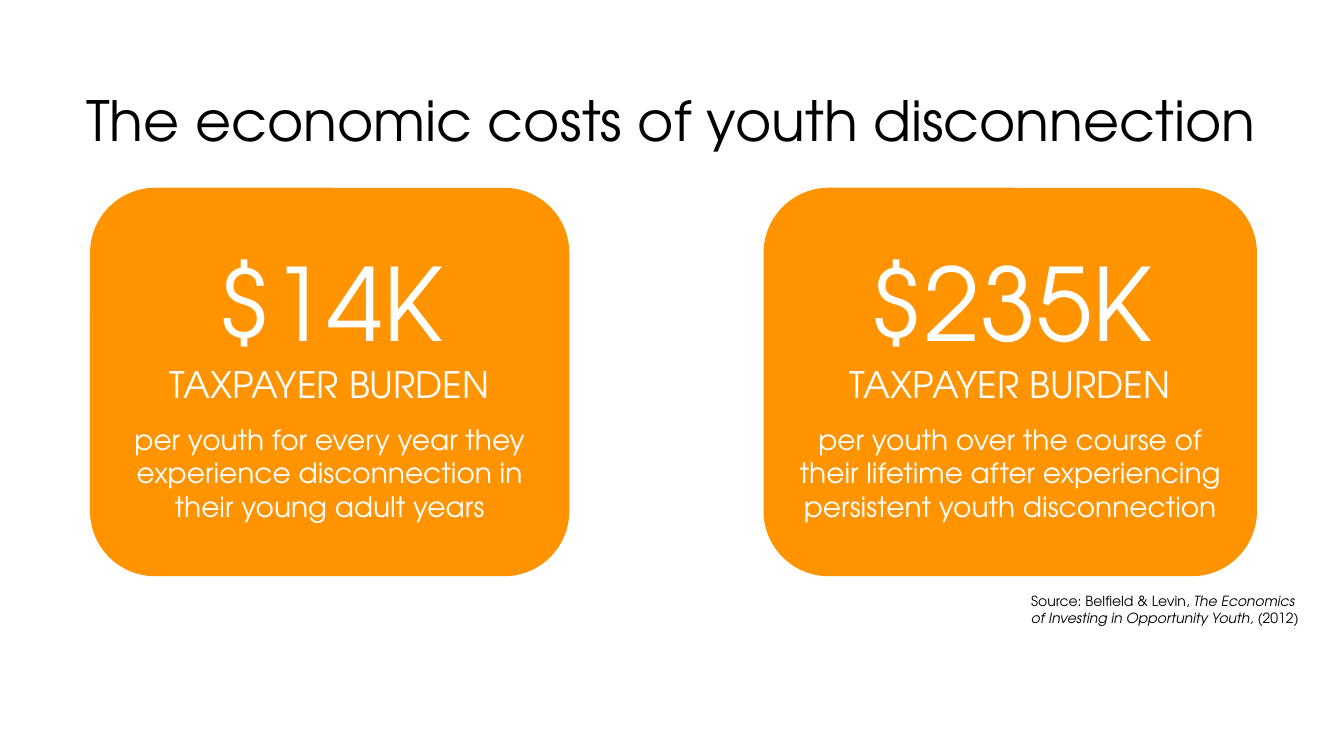
from dataclasses import dataclass

from pptx import Presentation
from pptx.dml.color import RGBColor
from pptx.enum.shapes import MSO_SHAPE
from pptx.enum.text import MSO_ANCHOR, MSO_AUTO_SIZE, PP_ALIGN
from pptx.util import Inches, Pt


@dataclass(frozen=True)
class Theme:
    face: str = "TeX Gyre Adventor"
    ink: RGBColor = RGBColor(0x00, 0x00, 0x00)
    paper: RGBColor = RGBColor(0xFF, 0xFF, 0xFF)
    card: RGBColor = RGBColor(0xFF, 0x93, 0x00)
    title: float = 39.6
    figure: float = 72
    label: float = 26
    body: float = 20
    source: float = 10


class Builder:
    """Draws styled elements on the current slide."""

    def __init__(self, slide, theme):
        self.slide = slide
        self.theme = theme

    def style(self, para, size, color, align=None):
        para.font.name = self.theme.face
        para.font.size = Pt(size)
        para.font.color.rgb = color
        para.alignment = align

    def title(self, text, left, top, width, height):
        box = self.slide.shapes.title
        box.left, box.top = Inches(left), Inches(top)
        box.width, box.height = Inches(width), Inches(height)
        frame = box.text_frame
        frame.text = text
        frame.word_wrap = True
        frame.auto_size = MSO_AUTO_SIZE.NONE
        frame.vertical_anchor = MSO_ANCHOR.MIDDLE
        para = frame.paragraphs[0]
        para.line_spacing = 0.9
        self.style(para, self.theme.title, self.theme.ink, PP_ALIGN.CENTER)

    def card(self, left, width, figure, detail):
        theme = self.theme
        shape = self.slide.shapes.add_shape(
            MSO_SHAPE.ROUNDED_RECTANGLE,
            Inches(left), Inches(1.87), Inches(width), Inches(3.84))
        shape.shadow.inherit = False
        shape.fill.solid()
        shape.fill.fore_color.rgb = theme.card
        shape.line.color.rgb = theme.card
        shape.line.width = Pt(1)
        frame = shape.text_frame
        frame.word_wrap = True
        frame.vertical_anchor = MSO_ANCHOR.MIDDLE
        frame.text = "\n".join((figure, "TAXPAYER BURDEN", detail))
        sizes = theme.figure, theme.label, theme.body
        for para, size in zip(frame.paragraphs, sizes):
            self.style(para, size, theme.paper, PP_ALIGN.CENTER)
        frame.paragraphs[1].space_after = Pt(12)

    def source(self, lead, work, year, left, top, width, height):
        box = self.slide.shapes.add_textbox(
            Inches(left), Inches(top), Inches(width), Inches(height))
        frame = box.text_frame
        frame.word_wrap = True
        frame.auto_size = MSO_AUTO_SIZE.SHAPE_TO_FIT_TEXT
        para = frame.paragraphs[0]
        self.style(para, self.theme.source, self.theme.ink)
        for text in (lead, work, year):
            run = para.add_run()
            run.text = text
            run.font.italic = text == work


def main():
    deck = Presentation()
    deck.slide_width, deck.slide_height = Inches(13.33), Inches(7.5)
    page = Builder(deck.slides.add_slide(deck.slide_layouts[5]), Theme())
    page.title("The economic costs of youth disconnection",
               0.29, 0.74, 12.73, 0.97)
    page.source("Source: Belfield & Levin, ",
                "The Economics of Investing in Opportunity Youth, ",
                "(2012)", 10.13, 5.83, 2.9, 0.44)
    page.card(0.9, 4.74, "$14K",
              "per youth for every year they experience disconnection "
              "in their young adult years")
    page.card(7.58, 4.88, "$235K",
              "per youth over the course of their lifetime after "
              "experiencing persistent youth disconnection")
    deck.save("out.pptx")


if __name__ == "__main__":
    main()
